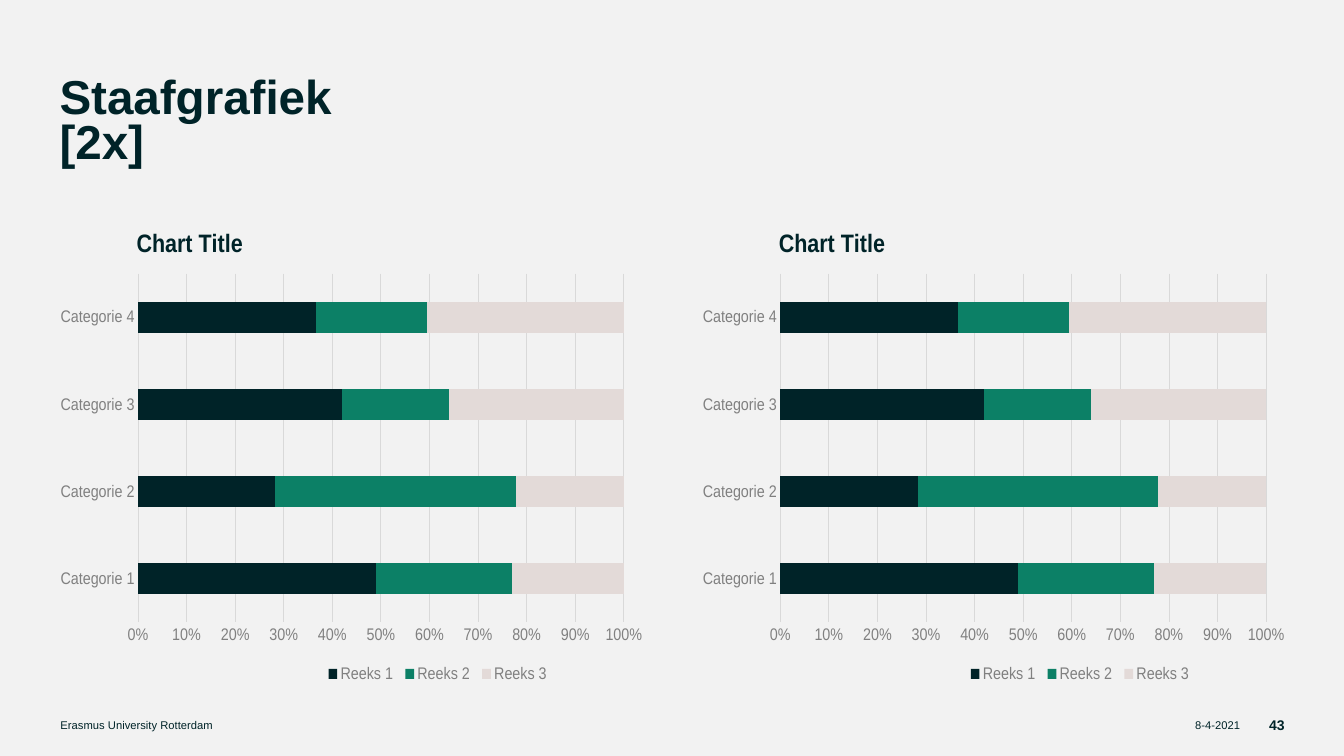
from typing import NamedTuple

from pptx import Presentation
from pptx.chart.data import CategoryChartData
from pptx.dml.color import RGBColor
from pptx.enum.chart import XL_CHART_TYPE as CT, XL_LEGEND_POSITION as LP, XL_TICK_MARK as TM
from pptx.enum.text import MSO_ANCHOR as MA, MSO_AUTO_SIZE as AS, PP_ALIGN as PA
from pptx.oxml import parse_xml
from pptx.oxml.ns import nsdecls, qn
from pptx.util import Inches, Pt

DARK, GREEN, SAND = "002328", "0C8066", "E3DAD8"
GREY, GRID, PAPER = "808080", "D9D9D9", "F2F2F2"


class Series(NamedTuple):
    name: str
    values: tuple[int, ...]
    color: str


class Label(NamedTuple):
    text: str
    left: float
    width: float
    size: int
    bold: bool
    align: PA


CATEGORIES = [f"Categorie {n}" for n in range(1, 5)]
SERIES = [
    Series("Reeks 1", (49, 28, 42, 37), DARK),
    Series("Reeks 2", (28, 49, 22, 23), GREEN),
    Series("Reeks 3", (23, 22, 36, 41), SAND),
]
FOOTER = [
    Label("Erasmus University Rotterdam", 0.6, 10.79, 8, False, PA.LEFT),
    Label("8-4-2021", 11.54, 0.76, 8, False, PA.RIGHT),
    Label("43", 12.45, 0.29, 10, True, PA.RIGHT),
]
CHART_LEFTS = (0.6, 6.97)


def rgb(value: str) -> RGBColor:
    return RGBColor.from_string(value)


def set_attrs(obj, values: dict) -> None:
    for name, value in values.items():
        setattr(obj, name, value)


def set_font(font, size: int, color: str, bold: bool = False) -> None:
    set_attrs(font, {"name": "Arial", "size": Pt(size), "bold": bold})
    font.color.rgb = rgb(color)


def set_line(line, color: str) -> None:
    line.color.rgb = rgb(color)
    line.width = Pt(0.75)


def write(sp, text: str, size: int, bold: bool, align: PA, anchor: MA):
    tf = sp.text_frame
    set_attrs(tf, {
        "margin_left": 0, "margin_right": 0, "margin_top": 0, "margin_bottom": 0,
        "word_wrap": True, "auto_size": AS.NONE, "vertical_anchor": anchor,
    })
    p = tf.paragraphs[0]
    p.text = text
    p.alignment = align
    for r in p.runs:
        set_font(r.font, size, DARK, bold)
    return p


def place(element, index: int, target: str = "", **fractions: float) -> None:
    for old in element.findall(qn("c:layout")):
        element.remove(old)
    inner = f'<c:layoutTarget val="{target}"/>' if target else ""
    inner += '<c:xMode val="edge"/><c:yMode val="edge"/>'
    inner += "".join(f'<c:{key} val="{value}"/>' for key, value in fractions.items())
    element.insert(index, parse_xml(
        f'<c:layout {nsdecls("c")}><c:manualLayout>{inner}</c:manualLayout></c:layout>'))


def add_bar_chart(slide, left: float) -> None:
    data = CategoryChartData()
    data.categories = CATEGORIES
    for s in SERIES:
        data.add_series(s.name, s.values)
    chart = slide.shapes.add_chart(
        CT.BAR_STACKED_100, Inches(left), Inches(2.15), Inches(5.77), Inches(4.75), data).chart
    set_font(chart.font, 10, "000000")

    chart.has_title = True
    p = chart.chart_title.text_frame.paragraphs[0]
    r = p.add_run()
    r.text = "Chart Title"
    set_font(r.font, 18, DARK, True)
    place(chart.chart_title._element, 1, x=0.01, y=0.01)

    plot = chart.plots[0]
    set_attrs(plot, {"gap_width": 182, "overlap": 100, "vary_by_categories": False})
    for s, bars in zip(SERIES, plot.series):
        bars.format.fill.solid()
        bars.format.fill.fore_color.rgb = rgb(s.color)
    place(chart._chartSpace.chart.plotArea, 0, "inner", x=0.021, y=0.119, w=0.979, h=0.728)

    cat_axis, val_axis = chart.category_axis, chart.value_axis
    for axis in (cat_axis, val_axis):
        set_attrs(axis, {"major_tick_mark": TM.NONE, "minor_tick_mark": TM.NONE})
        set_font(axis.tick_labels.font, 12, GREY)
    set_line(cat_axis.format.line, GRID)
    val_axis.format.line.fill.background()
    set_attrs(val_axis, {"has_major_gridlines": True, "major_unit": 0.1,
                         "minimum_scale": 0, "maximum_scale": 1})
    set_line(val_axis.major_gridlines.format.line, GRID)
    set_attrs(val_axis.tick_labels, {"number_format": "0%", "number_format_is_linked": False})

    chart.has_legend = True
    set_attrs(chart.legend, {"position": LP.BOTTOM, "include_in_layout": False})
    set_font(chart.legend.font, 12, GREY)
    place(chart.legend._element, 1, x=0.39, y=0.92, w=0.47, h=0.07)


def main() -> None:
    prs = Presentation()
    set_attrs(prs, {"slide_width": Inches(13.33), "slide_height": Inches(7.5)})
    slide = prs.slides.add_slide(prs.slide_layouts[5])
    slide.background.fill.solid()
    slide.background.fill.fore_color.rgb = rgb(PAPER)

    title = slide.shapes.title
    set_attrs(title, {"left": Inches(0.59), "top": Inches(0.79),
                      "width": Inches(12.15), "height": Inches(0.78)})
    p = write(title, "Staafgrafiek\v[2x]", 34, True, PA.LEFT, MA.TOP)
    p.line_spacing = Pt(32)

    for label in FOOTER:
        sp = slide.shapes.add_textbox(
            Inches(label.left), Inches(7.12), Inches(label.width), Inches(0.14))
        write(sp, label.text, label.size, label.bold, label.align, MA.MIDDLE)

    for left in CHART_LEFTS:
        add_bar_chart(slide, left)

    prs.save("out.pptx")


if __name__ == "__main__":
    main()
